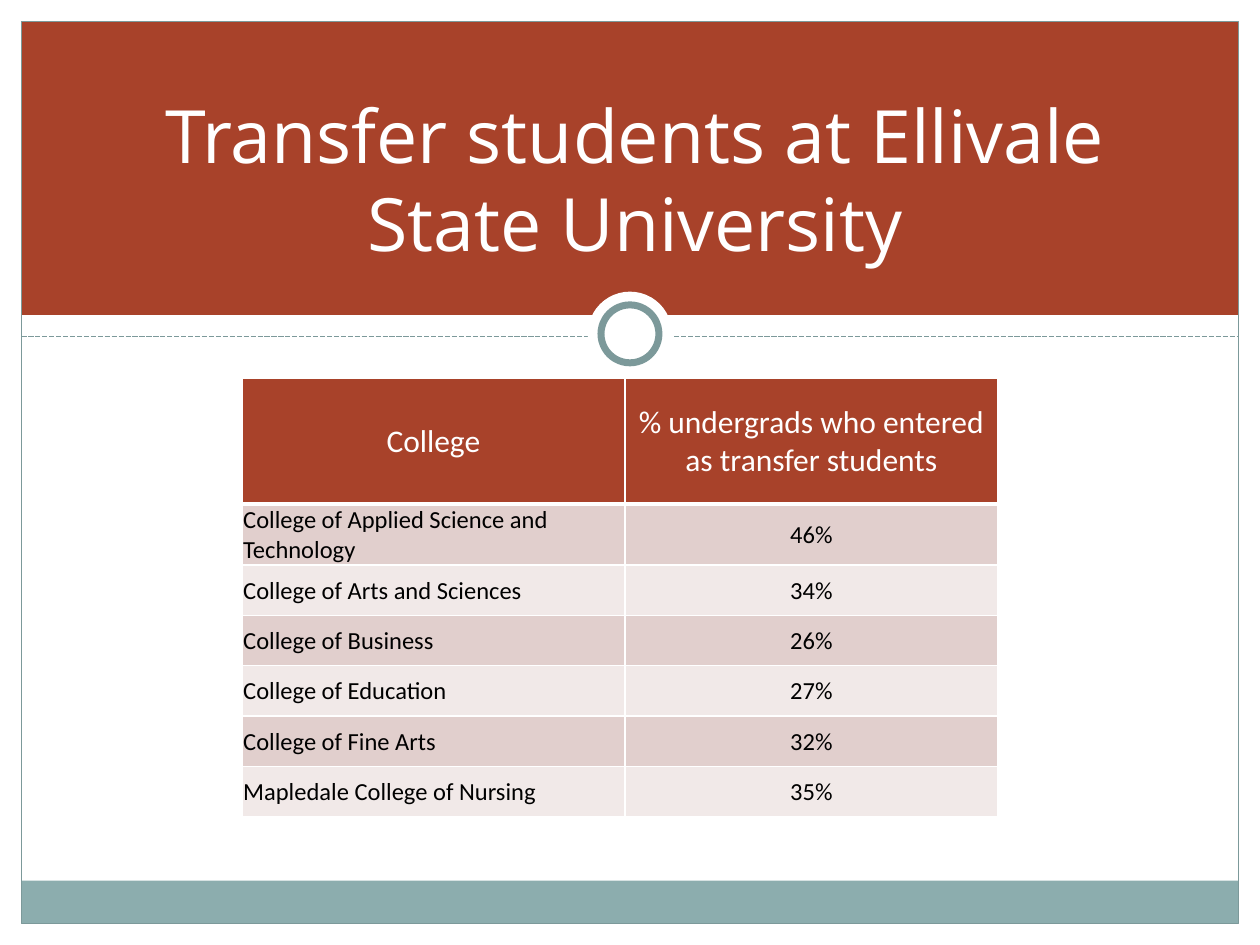
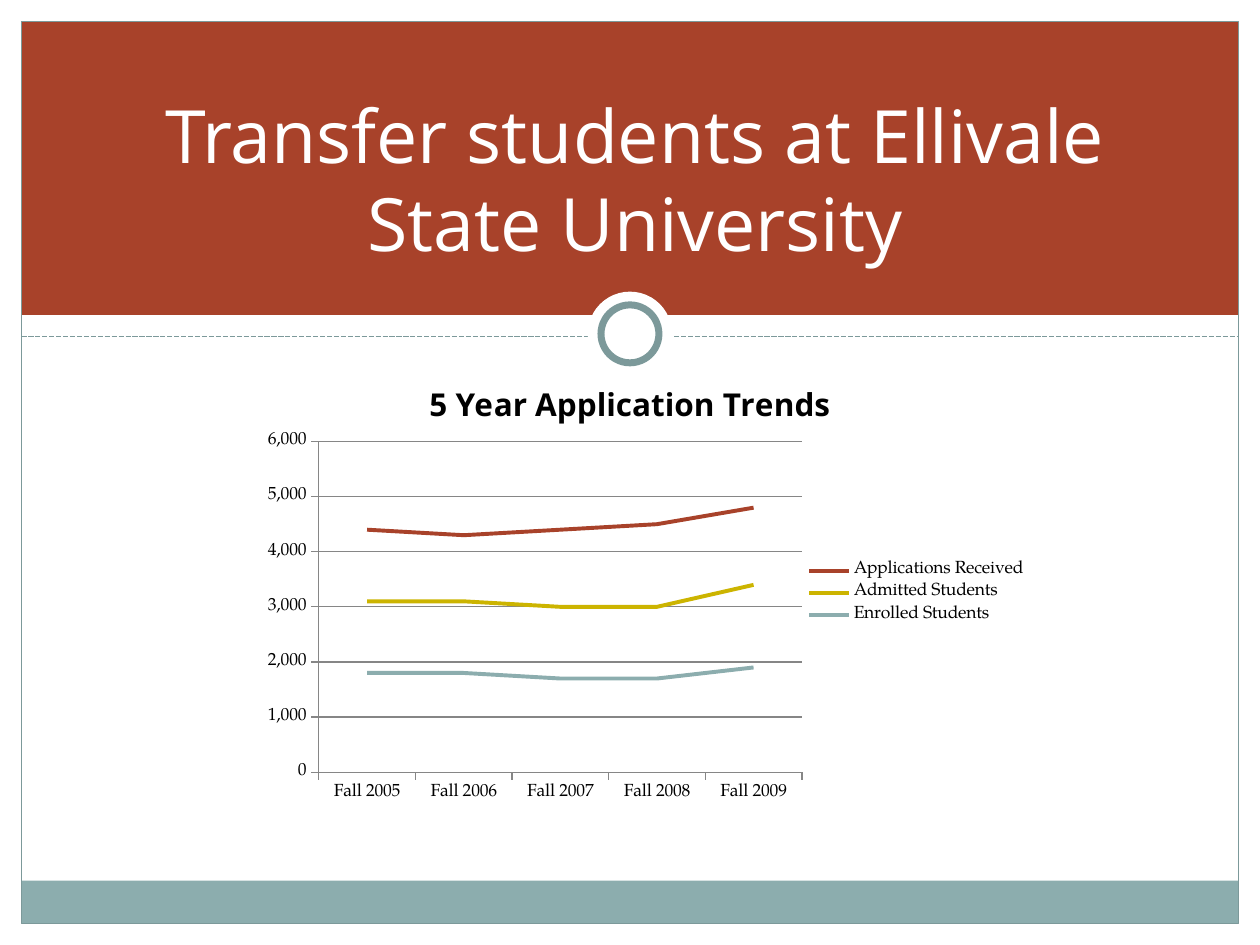
from lxml import etree
from pptx import Presentation
from pptx.chart.data import CategoryChartData
from pptx.dml.color import RGBColor
from pptx.enum.chart import XL_CHART_TYPE, XL_LEGEND_POSITION, XL_MARKER_STYLE, XL_TICK_MARK
from pptx.enum.dml import MSO_LINE
from pptx.enum.shapes import MSO_CONNECTOR, MSO_SHAPE
from pptx.enum.text import MSO_ANCHOR, PP_ALIGN
from pptx.oxml import parse_xml
from pptx.oxml.ns import nsdecls, qn
from pptx.util import Inches, Pt

LINE = XL_CHART_TYPE.LINE
RIGHT = XL_LEGEND_POSITION.RIGHT
BARE = XL_MARKER_STYLE.NONE
OUTSIDE = XL_TICK_MARK.OUTSIDE
DASH = MSO_LINE.SQUARE_DOT
STRAIGHT = MSO_CONNECTOR.STRAIGHT
RECT, OVAL = MSO_SHAPE.RECTANGLE, MSO_SHAPE.OVAL
MIDDLE = MSO_ANCHOR.MIDDLE
LEFT, CENTER = PP_ALIGN.LEFT, PP_ALIGN.CENTER

COLORS = {
    "rust": "A8422A", "gold": "CCB400", "teal": "8CADAE", "edge": "7C999A",
    "pink": "E1CFCD", "pale": "F1E9E8", "white": "FFFFFF", "black": "000000",
    "grid": "868686",
}
HEAD, BODY, SERIF = "Open Sans", "Calibri", "TeX Gyre Pagella"
TITLE = "Transfer students at Ellivale State University"

HEADER = ("College", "% undergrads who entered as transfer students")
RATES = [
    ("College of Applied Science and Technology", "46%"),
    ("College of Arts and Sciences", "34%"),
    ("College of Business", "26%"),
    ("College of Education", "27%"),
    ("College of Fine Arts", "32%"),
    ("Mapledale College of Nursing", "35%"),
]
YEARS = [f"Fall {year}" for year in range(2005, 2010)]
TRENDS = [
    ("Applications Received", (4400, 4300, 4400, 4500, 4800), "rust"),
    ("Admitted Students", (3100, 3100, 3000, 3000, 3400), "gold"),
    ("Enrolled Students", (1800, 1800, 1700, 1700, 1900), "teal"),
]


def rgb(name):
    """Return the named colour."""
    return RGBColor.from_string(COLORS[name])


def style(font, size, face, color="black", bold=False):
    """Format a font."""
    font.size, font.name, font.bold = Pt(size), face, bold
    font.color.rgb = rgb(color)


def write(frame, text, align=CENTER, **look):
    """Put one formatted paragraph in a text frame."""
    para = frame.paragraphs[0]
    para.alignment = align
    run = para.add_run()
    run.text = text
    style(run.font, **look)


def shape(slide, kind, box, fill=None, line=None, width=1):
    """Add a flat preset shape."""
    item = slide.shapes.add_shape(kind, *map(Inches, box))
    item.shadow.inherit = False
    if fill:
        item.fill.solid()
        item.fill.fore_color.rgb = rgb(fill)
    else:
        item.fill.background()
    if line:
        item.line.color.rgb = rgb(line)
        item.line.width = Pt(width)
    else:
        item.line.fill.background()


def rule(slide, left, top, width):
    """Add a dashed level line."""
    line = slide.shapes.add_connector(
        STRAIGHT, *map(Inches, (left, top, left + width, top)))
    line.line.color.rgb = rgb("edge")
    line.line.width = Pt(1)
    line.line.dash_style = DASH
    etree.SubElement(line._element.spPr, qn("a:effectLst"))


def ring(slide, x, y):
    """Add the ring and its white halo around a centre."""
    for size, line in ((0.67, None), (0.46, "edge")):
        box = (x - size / 2, y - size / 2, size, size)
        shape(slide, OVAL, box, "white", line, 4)


def frame(slide, box):
    """Draw the bands, border, dashed line and ring inside a box."""
    left, top, width, height = box
    band, foot = 2.33, 0.34
    shape(slide, RECT, (left, top, width, band), "rust")
    shape(slide, RECT, (left, top + height - foot, width, foot), "teal")
    shape(slide, RECT, box, line="edge")
    rule(slide, left, top + 2.5, width)
    ring(slide, left + width / 2, top + 2.48)


def start(deck):
    """Add a framed slide with its title in front."""
    slide = deck.slides.add_slide(deck.slide_layouts[5])
    frame(slide, (0.17, 0.17, 9.66, 7.16))
    title = slide.shapes.title
    title.left, title.top, title.width, title.height = map(
        Inches, (0.79, 0.58, 8.5, 1.67))
    title.text_frame.word_wrap = True
    title.text_frame.vertical_anchor = MIDDLE
    write(title.text_frame, TITLE, size=42, face=HEAD, color="white")
    slide.shapes._spTree.append(title._element)
    return slide


def edges(cell, base):
    """Give a cell white borders, with its own weight below."""
    props = cell._tc.get_or_add_tcPr()
    for spot, side in enumerate("LRTB"):
        width = Pt(base if side == "B" else 1)
        props.insert(spot, parse_xml(
            f'<a:ln{side} {nsdecls("a")} w="{width}"><a:solidFill>'
            f'<a:srgbClr val="{COLORS["white"]}"/></a:solidFill></a:ln{side}>'))


def fill(cell, text, tint, base=1, **look):
    """Fill and format a table cell."""
    cell.margin_left = cell.margin_right = cell.margin_top = Inches(0.01)
    cell.margin_bottom = 0
    cell.vertical_anchor = MIDDLE
    cell.fill.solid()
    cell.fill.fore_color.rgb = rgb(tint)
    edges(cell, base)
    write(cell.text_frame, text, face=BODY, **look)


def rates(slide, box):
    """Build the table of transfer rates by college."""
    rows = [HEADER, *RATES]
    table = slide.shapes.add_table(len(rows), 2, *map(Inches, box)).table
    for col, width in zip(table.columns, (3.04, 2.96)):
        col.width = Inches(width)
    for r, row in enumerate(rows):
        table.rows[r].height = Inches({0: 1, 1: 0.47}.get(r, 0.4))
        for c, text in enumerate(row):
            cell = table.cell(r, c)
            if r == 0:
                fill(cell, text, "rust", base=3, size=18, color="white")
            else:
                fill(cell, text, "pink" if r % 2 else "pale", size=14,
                     align=CENTER if c else LEFT)


def place(chart, box):
    """Fix the inner plot area as shares of the chart."""
    area = chart._chartSpace.chart.plotArea
    for old in area.findall(qn("c:layout")):
        area.remove(old)
    parts = [("layoutTarget", "inner"), ("xMode", "edge"), ("yMode", "edge"),
             *zip("xywh", box)]
    inner = "".join(f'<c:{tag} val="{val}"/>' for tag, val in parts)
    area.insert(0, parse_xml(
        f'<c:layout {nsdecls("c")}><c:manualLayout>{inner}'
        '</c:manualLayout></c:layout>'))


def trends(slide, box):
    """Build the line chart of applications over five years."""
    data = CategoryChartData(number_format="#,##0")
    data.categories = YEARS
    for name, vals, _ in TRENDS:
        data.add_series(name, vals)
    chart = slide.shapes.add_chart(LINE, *map(Inches, box), data).chart
    style(chart.font, 10, SERIF)
    chart.has_title = True
    write(chart.chart_title.text_frame, "5 Year Application Trends",
          size=18, face=HEAD, bold=True)
    chart.chart_title.include_in_layout = False
    chart.has_legend = True
    chart.legend.position = RIGHT
    chart.legend.include_in_layout = False
    place(chart, (0.12, 0.18, 0.59, 0.7))
    plot = chart.plots[0]
    plot.vary_by_categories = False
    for line, (_, _, color) in zip(plot.series, TRENDS):
        line.smooth = False
        line.marker.style = BARE
        line.format.line.color.rgb = rgb(color)
        line.format.line.width = Pt(2.25)
    scale = chart.value_axis
    scale.minimum_scale, scale.maximum_scale, scale.major_unit = 0, 6000, 1000
    scale.tick_labels.number_format = "#,##0"
    scale.tick_labels.number_format_is_linked = False
    scale.has_major_gridlines = True
    for axis in (scale, chart.category_axis):
        axis.major_tick_mark = OUTSIDE
        axis.format.line.color.rgb = rgb("grid")
    scale.major_gridlines.format.line.color.rgb = rgb("grid")


def main():
    """Build and save the deck."""
    deck = Presentation()
    deck.slide_width, deck.slide_height = Inches(10), Inches(7.5)
    rates(start(deck), (1.92, 3, 6, 3.47))
    trends(start(deck), (1.75, 2.83, 6.5, 3.75))
    deck.save("out.pptx")


if __name__ == "__main__":
    main()
